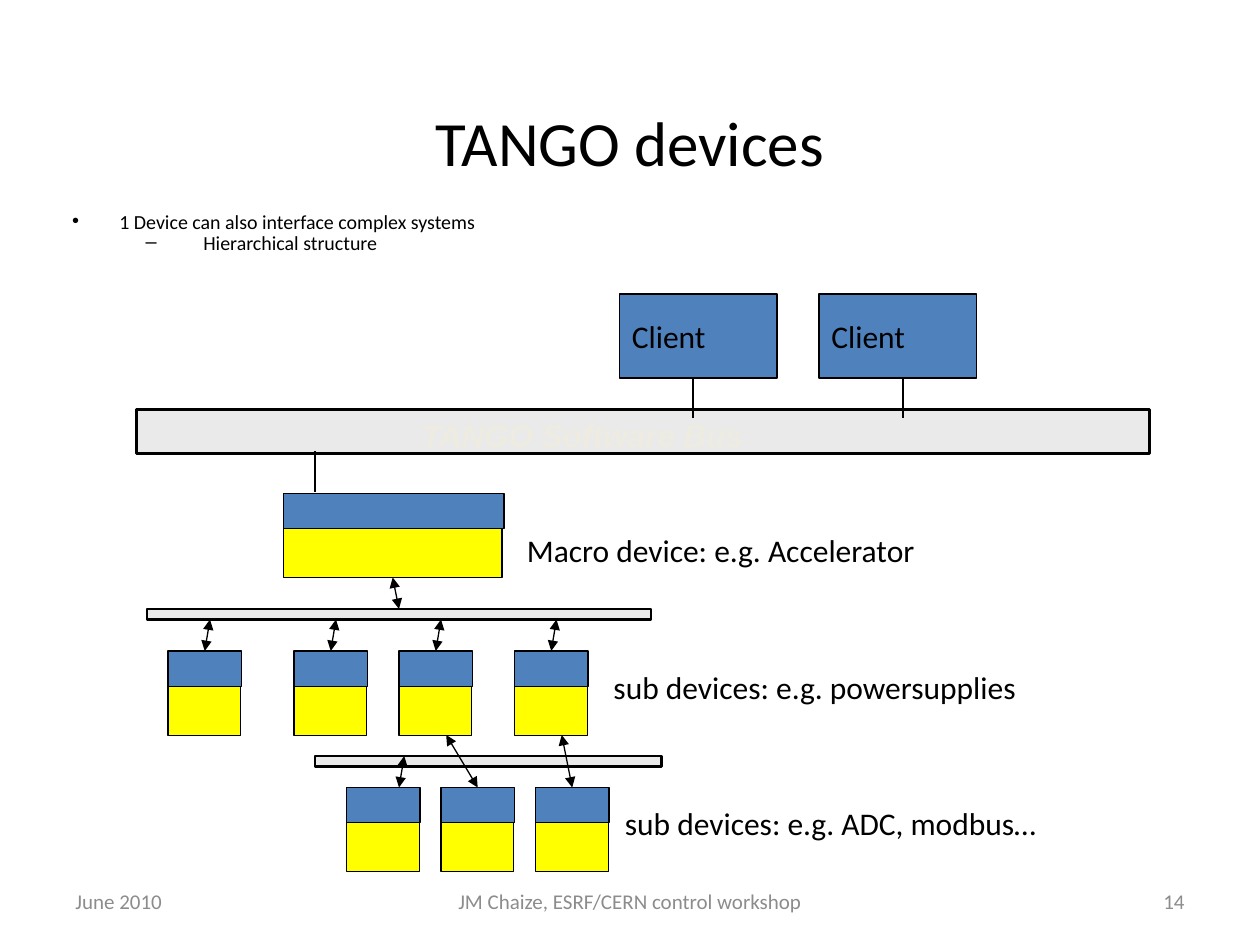
from lxml.etree import SubElement
from pptx import Presentation
from pptx.dml.color import RGBColor
from pptx.enum.shapes import MSO_CONNECTOR, MSO_SHAPE
from pptx.enum.text import MSO_ANCHOR, MSO_AUTO_SIZE, PP_ALIGN
from pptx.oxml.ns import qn
from pptx.util import Pt

BLACK = RGBColor(0x00, 0x00, 0x00)
GREY = RGBColor(0x8C, 0x8C, 0x8C)
BUS_GREY = RGBColor(0xEA, 0xEA, 0xEA)
CREAM = RGBColor(0xEE, 0xEC, 0xE1)
BLUE = RGBColor(0x4F, 0x81, 0xBD)
YELLOW = RGBColor(0xFF, 0xFF, 0x00)


class Diagram:
    """Draws styled elements on one page; all lengths are in points."""

    font = {"name": "Calibri", "size": Pt(18)}
    head_height = 20.2
    body_height = 28

    def __init__(self, page):
        self.page = page

    def add_text(self, para, text, color=BLACK, **font):
        span = para.add_run()
        span.text = text
        for name, value in {**self.font, **font}.items():
            setattr(span.font, name, value)
        span.font.color.rgb = color

    def place(self, shape, left, top, width, height):
        for name, value in zip(("left", "top", "width", "height"), (left, top, width, height)):
            setattr(shape, name, Pt(value))

    def title(self, text, *area):
        box = self.page.shapes.title
        self.place(box, *area)
        box.text_frame.vertical_anchor = MSO_ANCHOR.MIDDLE
        para = box.text_frame.paragraphs[0]
        para.alignment = PP_ALIGN.CENTER
        self.add_text(para, text, size=Pt(36))

    def bullets(self, items, *area):
        """Fill the body with (level, mark, margin, indent, text) items."""
        box = self.page.placeholders[1]
        self.place(box, *area)
        frame = box.text_frame
        frame.auto_size = MSO_AUTO_SIZE.NONE
        for index, (level, mark, margin, indent, text) in enumerate(items):
            para = frame.add_paragraph() if index else frame.paragraphs[0]
            para.level = level
            properties = para._p.get_or_add_pPr()
            properties.set("marL", str(Pt(margin)))
            properties.set("indent", str(Pt(indent)))
            SubElement(properties, qn("a:buChar"), char=mark)
            para.line_spacing = 0.7
            para.space_before = Pt(2.3 if index else 0)
            self.add_text(para, text, size=Pt(11.4))

    def label(self, text, *area, color=BLACK, align=PP_ALIGN.LEFT, anchor=MSO_ANCHOR.TOP, **font):
        box = self.page.shapes.add_textbox(*map(Pt, area))
        box.text_frame.word_wrap = True
        box.text_frame.vertical_anchor = anchor
        para = box.text_frame.paragraphs[0]
        para.alignment = align
        self.add_text(para, text, color, **font)

    def block(self, fill, *area, line=0.75, kind=MSO_SHAPE.RECTANGLE, shapes=None):
        shapes = shapes or self.page.shapes
        shape = shapes.add_shape(kind, *map(Pt, area))
        shape.shadow.inherit = False
        shape.fill.solid()
        shape.fill.fore_color.rgb = fill
        shape.line.color.rgb = BLACK
        shape.line.width = Pt(line)
        return shape

    def bus(self, *area):
        shape = self.block(BUS_GREY, *area, line=1.5, kind=MSO_SHAPE.ROUNDED_RECTANGLE)
        shape.adjustments[0] = 0

    def client(self, left):
        shape = self.block(BLUE, left, 168, 90, 48, line=1)
        frame = shape.text_frame
        frame.word_wrap = True
        frame.vertical_anchor = MSO_ANCHOR.MIDDLE
        frame.paragraphs[0].alignment = PP_ALIGN.LEFT
        self.add_text(frame.paragraphs[0], "Client")

    def device(self, left, top, head_width=42, body_width=41.6):
        group = self.page.shapes.add_group_shape()
        body_top = top + self.head_height
        self.block(YELLOW, left, body_top, body_width, self.body_height, shapes=group.shapes)
        self.block(BLUE, left, top, head_width, self.head_height, shapes=group.shapes)

    def link(self, *ends, arrows=False):
        connector = self.page.shapes.add_connector(MSO_CONNECTOR.STRAIGHT, *map(Pt, ends))
        connector.line.color.rgb = BLACK
        connector.line.width = Pt(0.75)
        properties = connector._element.spPr
        if arrows:
            for end in ("a:headEnd", "a:tailEnd"):
                SubElement(properties.find(qn("a:ln")), qn(end), type="triangle")
        SubElement(properties, qn("a:effectLst"))


def main():
    deck = Presentation()
    deck.slide_width, deck.slide_height = Pt(720), Pt(540)
    diagram = Diagram(deck.slides.add_slide(deck.slide_layouts[1]))

    diagram.title("TANGO devices", 120, 48, 480, 66)
    diagram.bullets([
        (0, "•", 27, -27, "1 Device can also interface complex systems"),
        (1, "–", 75, -33, "Hierarchical structure"),
    ], 34, 120, 686, 29.5)

    footers = [
        ("June 2010", 36, 168, PP_ALIGN.LEFT),
        ("JM Chaize, ESRF/CERN control workshop", 246, 228, PP_ALIGN.CENTER),
        ("14", 516, 168, PP_ALIGN.RIGHT),
    ]
    for text, left, width, align in footers:
        diagram.label(text, left, 500.5, width, 28.8, color=GREY, align=align,
                      anchor=MSO_ANCHOR.MIDDLE, size=Pt(12))

    diagram.bus(78, 234, 579, 25.2)
    diagram.label("TANGO Software Bus", 234, 234, 215, 29, color=CREAM,
                  name="Arial", bold=True, italic=True)
    for client_left, link_x in ((354, 396), (468, 516)):
        diagram.client(client_left)
        diagram.link(link_x, 216, link_x, 239)

    diagram.device(162, 282, 126, 124.8)
    diagram.link(180, 258, 180, 281)
    diagram.bus(84, 348, 288, 6)
    diagram.link(224.4, 330, 228, 348, arrows=True)

    for left in (96, 168, 228, 294):
        diagram.device(left, 372)
        diagram.link(left + 24, 354, left + 21, 372, arrows=True)

    diagram.bus(180, 432, 198, 6)
    for left in (198, 252, 306):
        diagram.device(left, 450)
    for start_x, start_y, end_x in ((231, 432, 228), (255, 420, 273), (321, 420, 327)):
        diagram.link(start_x, start_y, end_x, 450, arrows=True)

    captions = [
        ("Macro device: e.g. Accelerator", 294, 300),
        ("sub devices: e.g. powersupplies", 343.5, 378),
        ("sub devices: e.g. ADC, modbus…", 350, 456),
    ]
    for text, left, top in captions:
        diagram.label(text, left, top, 330, 36.7)

    deck.save("out.pptx")


if __name__ == "__main__":
    main()
